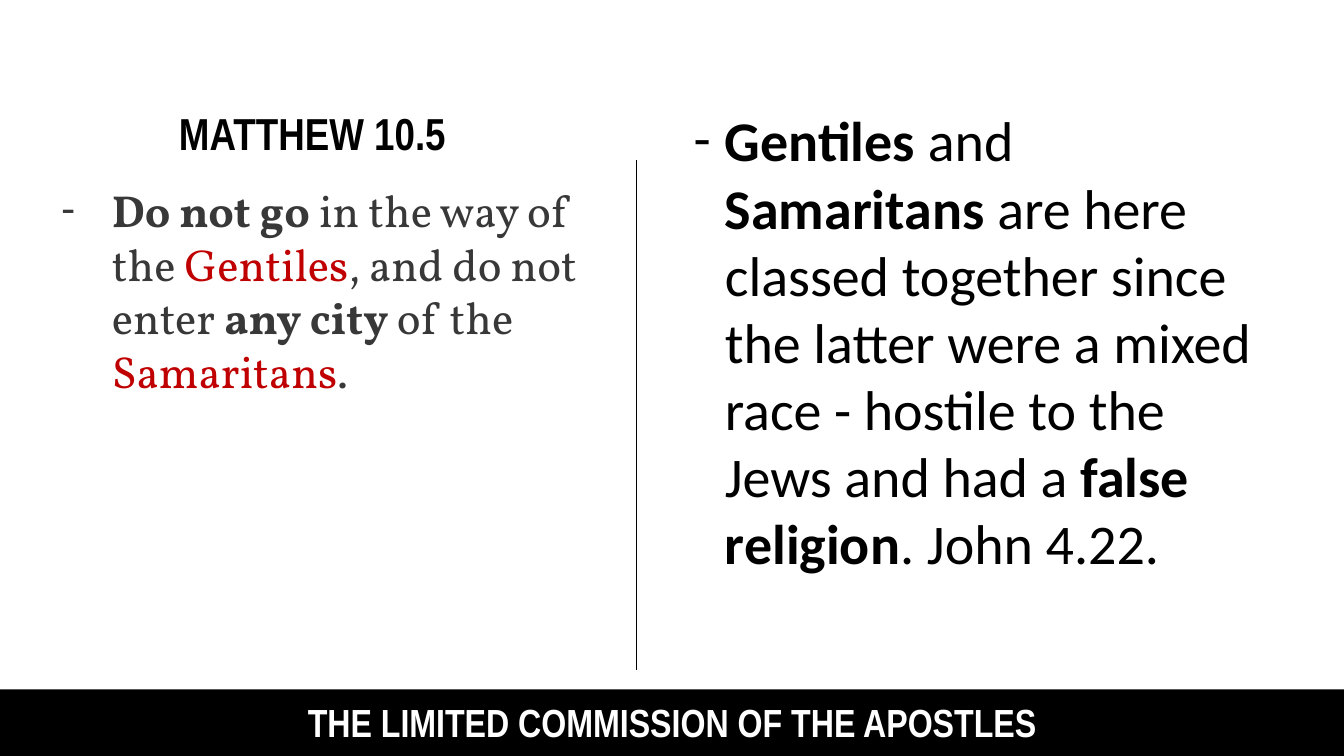
import dataclasses
import typing

import lxml.etree
import pptx
import pptx.dml.color
import pptx.enum.shapes
import pptx.enum.text
import pptx.oxml.ns
import pptx.util

Inches = pptx.util.Inches
Pt = pptx.util.Pt
BLACK, WHITE, GREY, RED = "000000", "FFFFFF", "383838", "C00000"


@dataclasses.dataclass
class Run:
    text: str
    bold: bool = False
    ink: typing.Optional[str] = None


@dataclasses.dataclass
class Block:
    slot: int
    box: tuple[float, float, float, float]
    font: str
    size: int
    ink: str
    runs: list[Run]
    indent: float = 0


BLOCKS = [
    Block(0, (2.37, 6.88, 8.59, 0.57), "Arial Narrow", 28, WHITE,
          [Run("THE LIMITED COMMISSION OF THE APOSTLES", True)]),
    Block(1, (1.01, 1, 4.18, 0.64), "Arial Narrow", 32, BLACK,
          [Run("MATTHEW 10.5", True)]),
    Block(2, (0.51, 1.76, 5.42, 2.79), "Vollkorn", 32, GREY,
          [Run("Do not go ", True), Run("in the way of the "),
           Run("Gentiles", ink=RED), Run(", and do not enter "),
           Run("any city ", True), Run("of the "),
           Run("Samaritans", ink=RED), Run(".")], 0.5),
    Block(4, (6.78, 1, 5.73, 5.49), "Calibri", 40, BLACK,
          [Run("Gentiles ", True), Run("and "), Run("Samaritans ", True),
           Run("are here classed together since the latter were a mixed race"
               " - hostile to the Jews and had a "),
           Run("false religion", True), Run(". John 4.22.")], 0.31),
]


def color(code: str) -> pptx.dml.color.RGBColor:
    return pptx.dml.color.RGBColor.from_string(code)


def add_node(parent, tag: str, **attrs: str) -> None:
    lxml.etree.SubElement(parent, pptx.oxml.ns.qn(tag), attrs)


def set_bullet(para, indent: float) -> None:
    props = para._p.get_or_add_pPr()
    props.set("marL", str(Inches(indent)))
    props.set("indent", str(-Inches(indent)))
    if indent:
        add_node(props, "a:buFont", typeface="Calibri")
        add_node(props, "a:buChar", char="-")
    else:
        add_node(props, "a:buNone")


def fill_block(slide, block: Block) -> None:
    shape = slide.placeholders[block.slot]
    shape.left, shape.top, shape.width, shape.height = map(Inches, block.box)
    frame = shape.text_frame
    frame.word_wrap = True
    frame.auto_size = pptx.enum.text.MSO_AUTO_SIZE.NONE
    frame.vertical_anchor = pptx.enum.text.MSO_ANCHOR.TOP
    para = frame.paragraphs[0]
    align = pptx.enum.text.PP_ALIGN
    para.alignment = align.LEFT if block.indent else align.CENTER
    para.line_spacing = 1.0
    para.space_before = Pt(0)
    set_bullet(para, block.indent)
    para.font.name = block.font
    para.font.size = Pt(block.size)
    para.font.color.rgb = color(block.ink)
    for item in block.runs:
        run = para.add_run()
        run.text = item.text
        run.font.bold = item.bold
        if item.ink:
            run.font.color.rgb = color(item.ink)


def add_band(slide) -> None:
    band = slide.shapes.add_shape(
        pptx.enum.shapes.MSO_SHAPE.RECTANGLE,
        0, Inches(6.84), Inches(13.33), Inches(0.66))
    band.shadow.inherit = False
    band.fill.solid()
    band.fill.fore_color.rgb = color(BLACK)
    band.line.fill.background()
    slide.shapes.title.element.addprevious(band.element)


def add_rule(slide) -> None:
    rule = slide.shapes.add_connector(
        pptx.enum.shapes.MSO_CONNECTOR.STRAIGHT,
        Inches(6.31), Inches(1.59), Inches(6.31), Inches(6.65))
    rule.line.color.rgb = color(BLACK)
    rule.line.width = Pt(1)
    add_node(rule.element.spPr, "a:effectLst")


def main() -> None:
    deck = pptx.Presentation()
    deck.slide_width, deck.slide_height = Inches(13.33), Inches(7.5)
    slide = deck.slides.add_slide(deck.slide_layouts.get_by_name("Comparison"))
    for block in BLOCKS:
        fill_block(slide, block)
    spare = slide.placeholders[3].element
    spare.getparent().remove(spare)
    add_band(slide)
    add_rule(slide)
    deck.save("out.pptx")


if __name__ == "__main__":
    main()
